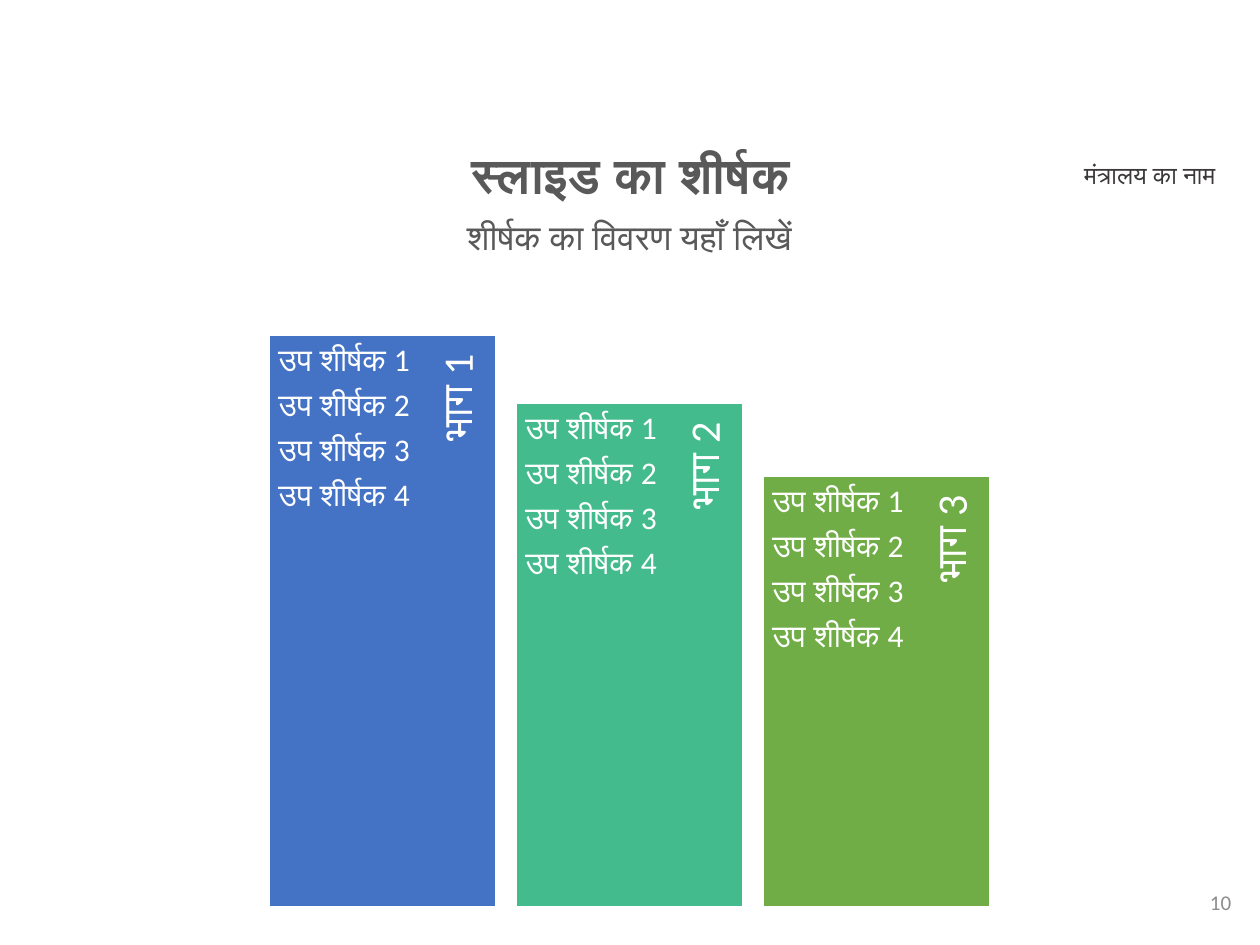
from dataclasses import dataclass

from lxml.etree import SubElement
from pptx import Presentation
from pptx.dml.color import RGBColor
from pptx.enum.shapes import MSO_SHAPE as Shape
from pptx.enum.text import MSO_ANCHOR as Anchor, MSO_AUTO_SIZE as AutoSize, PP_ALIGN as Align
from pptx.oxml.ns import qn
from pptx.util import Inches, Pt

COLORS = {
    "white": "FFFFFF",
    "heading": "595959",
    "ministry": "3B3838",
    "number": "8C8C8C",
    "blue": "4472C4",
    "teal": "43BB8D",
    "green": "70AD47",
}
FONT = "Calibri"
BAR_LEFT, BAR_STEP, BAR_WIDTH, BAR_BOTTOM = 2.14, 1.96, 1.8, 7.2
LIST_WIDTH = 1.28
LABEL_CENTER, LABEL_HEIGHT, LABEL_SHARE = 1.52, 0.47, 0.9
SUBHEADINGS = [f"उप शीर्षक {number}" for number in range(1, 5)]


@dataclass
class Bar:
    label: str
    top: float
    color: str


@dataclass
class Style:
    size: float
    color: str
    align: Align = Align.LEFT
    bold: bool = False
    anchor: Anchor = Anchor.TOP
    margins: tuple = (0.1, 0.05, 0.1, 0.05)
    line_spacing: float = 1.0
    space_after_percent: int = 0


BARS = [
    Bar("भाग 1", 2.66, "blue"),
    Bar("भाग 2", 3.2, "teal"),
    Bar("भाग 3", 3.78, "green"),
]
TITLE = Style(28, "heading", Align.CENTER, bold=True, line_spacing=0.9)
SUBTITLE = Style(20, "heading", Align.CENTER, line_spacing=0.9)
MINISTRY = Style(14, "ministry", Align.CENTER)
NUMBER = Style(12, "number", Align.RIGHT, anchor=Anchor.MIDDLE)
BAR_LABEL = Style(24, "white", Align.RIGHT, anchor=Anchor.MIDDLE,
                  margins=(0.1, 0, 0.15, 0.03), line_spacing=0.9, space_after_percent=35)
BAR_LIST = Style(18, "white", margins=(0.07,) * 4, line_spacing=0.9, space_after_percent=35)


def rgb(name: str) -> RGBColor:
    return RGBColor.from_string(COLORS[name])


def set_attributes(target, values: dict) -> None:
    for name, value in values.items():
        setattr(target, name, value)


def write_text(shape, lines: list[str], style: Style) -> None:
    frame = shape.text_frame
    left, top, right, bottom = (Inches(margin) for margin in style.margins)
    set_attributes(frame, {
        "word_wrap": True, "auto_size": AutoSize.NONE, "vertical_anchor": style.anchor,
        "margin_left": left, "margin_top": top,
        "margin_right": right, "margin_bottom": bottom,
    })
    for index, line in enumerate(lines):
        paragraph = frame.paragraphs[0] if index == 0 else frame.add_paragraph()
        set_attributes(paragraph, {"alignment": style.align, "line_spacing": style.line_spacing})
        if style.space_after_percent:
            # Spacing relative to the text size has no public setter
            spacing = SubElement(paragraph._p.get_or_add_pPr(), qn("a:spcAft"))
            SubElement(spacing, qn("a:spcPct")).set("val", str(style.space_after_percent * 1000))
        run = paragraph.add_run()
        run.text = line
        set_attributes(run.font, {"name": FONT, "size": Pt(style.size), "bold": style.bold})
        run.font.color.rgb = rgb(style.color)


def add_text(slide, box: tuple, lines: list[str], style: Style):
    shape = slide.shapes.add_textbox(*(Inches(value) for value in box))
    write_text(shape, lines, style)
    return shape


def add_bar(slide, left: float, bar: Bar) -> None:
    height = BAR_BOTTOM - bar.top
    shape = slide.shapes.add_shape(Shape.RECTANGLE, Inches(left), Inches(bar.top),
                                   Inches(BAR_WIDTH), Inches(height))
    shape.shadow.inherit = False
    shape.fill.solid()
    shape.fill.fore_color.rgb = rgb(bar.color)
    shape.line.color.rgb = rgb("white")
    shape.line.width = Pt(1)

    # The label reads upwards and ends at the top of the bar
    length = height * LABEL_SHARE
    label_box = (left + LABEL_CENTER - length / 2,
                 bar.top + length / 2 - LABEL_HEIGHT / 2, length, LABEL_HEIGHT)
    add_text(slide, label_box, [bar.label], BAR_LABEL).rotation = 270
    add_text(slide, (left, bar.top, LIST_WIDTH, height), SUBHEADINGS, BAR_LIST)


def main() -> None:
    presentation = Presentation()
    presentation.slide_width, presentation.slide_height = Inches(10), Inches(7.5)
    slide = presentation.slides.add_slide(presentation.slide_layouts[5])

    # Headings
    title = slide.shapes.title
    set_attributes(title, {"left": Inches(1.86), "top": Inches(1.15),
                           "width": Inches(6.29), "height": Inches(0.47)})
    write_text(title, ["स्लाइड का शीर्षक"], TITLE)
    add_text(slide, (1.46, 1.7, 7.07, 0.63), ["शीर्षक का विवरण यहाँ लिखें"], SUBTITLE)

    # Ministry name and page number
    add_text(slide, (8.31, 1.22, 1.63, 0.34), ["मंत्रालय का नाम"], MINISTRY)
    add_text(slide, (7.62, 6.96, 2.25, 0.4), ["10"], NUMBER)

    # Descending bars
    for index, bar in enumerate(BARS):
        add_bar(slide, BAR_LEFT + index * BAR_STEP, bar)

    presentation.save("out.pptx")


if __name__ == "__main__":
    main()
